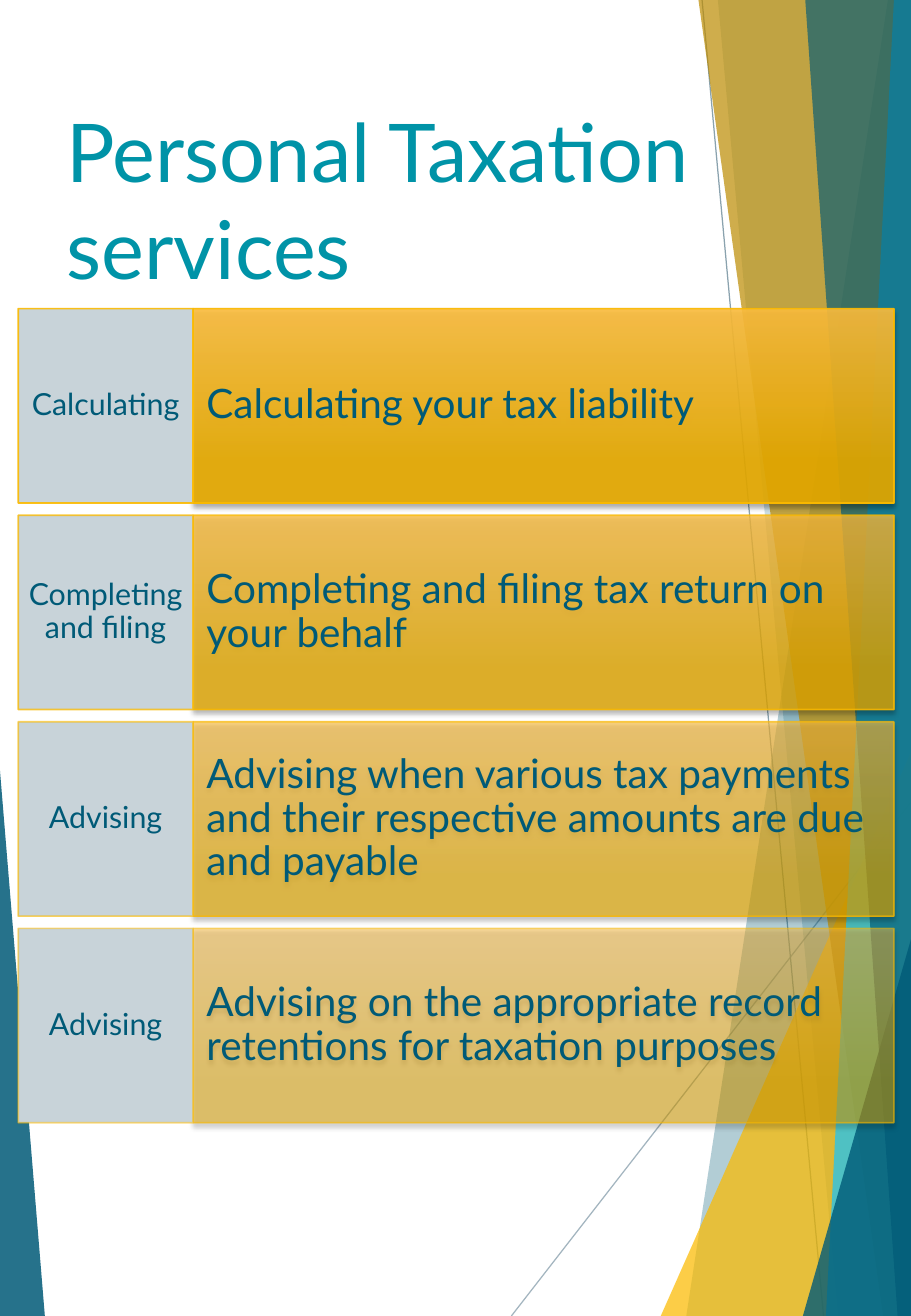
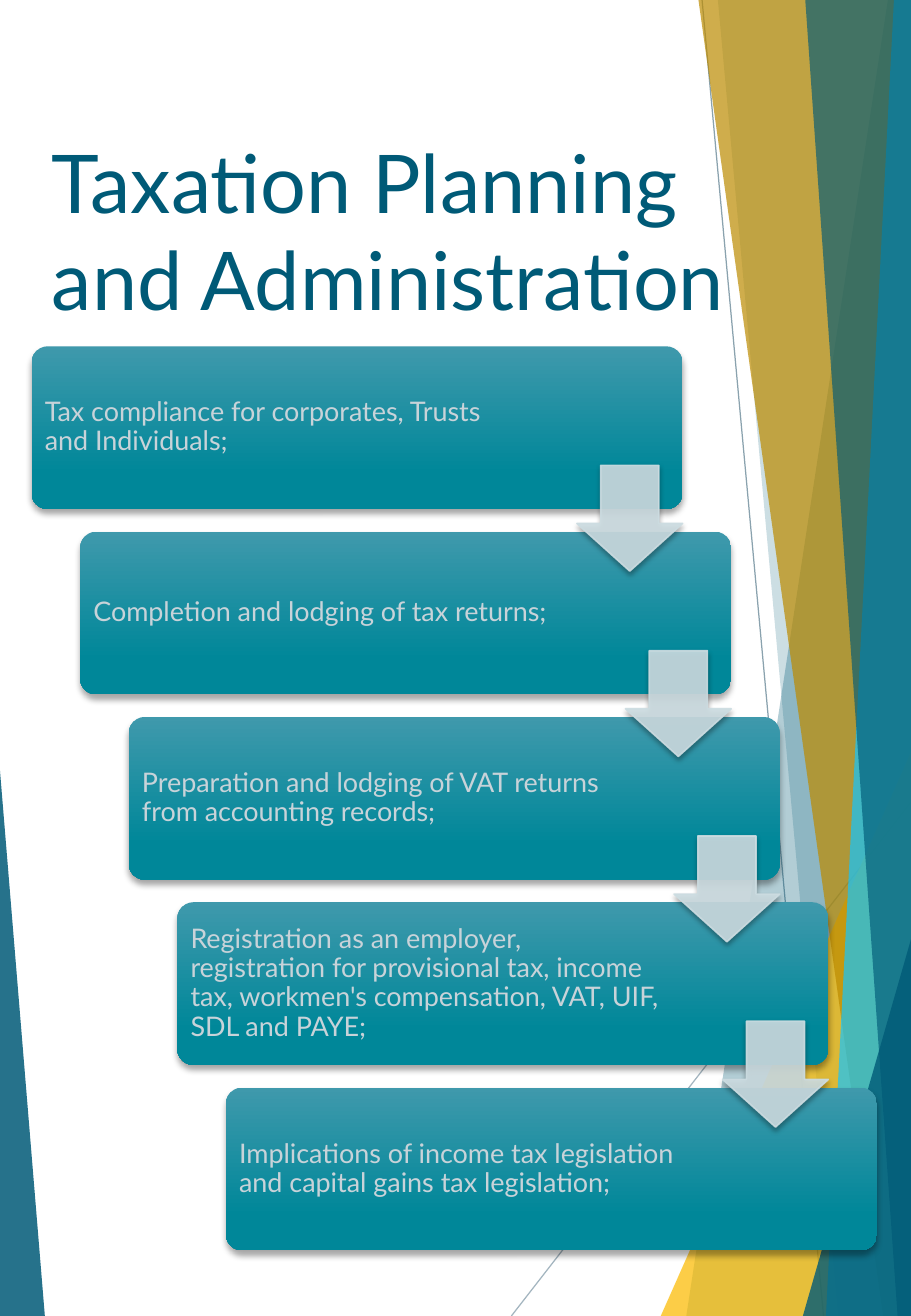
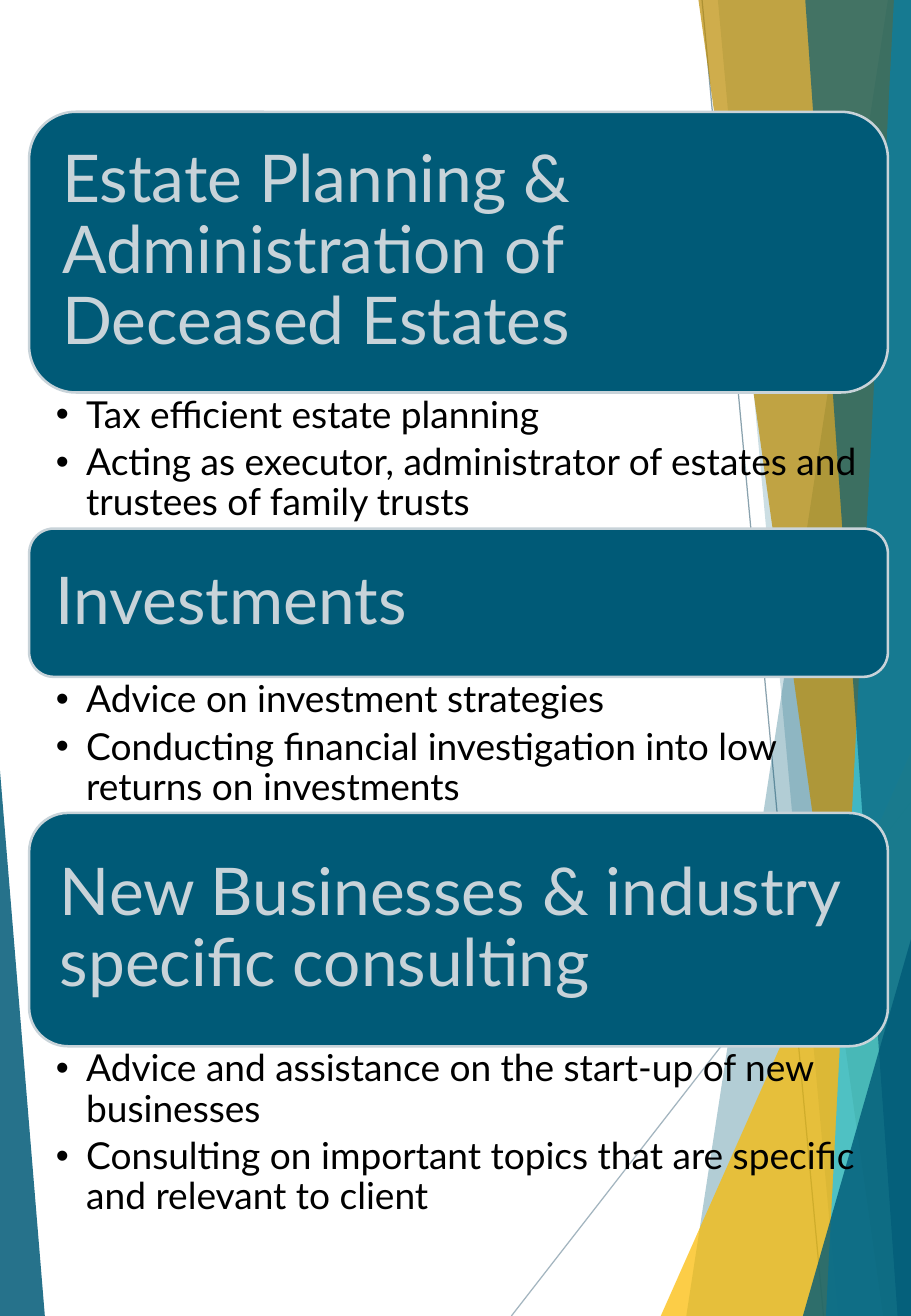
from lxml import etree
from pptx import Presentation
from pptx.dml.color import RGBColor
from pptx.enum import shapes, text
from pptx.oxml.ns import qn
from pptx.util import Inches, Pt

WIDE, HIGH = 7.5, 10.83
FONT = "Lato"
NAVY = RGBColor(0x00, 0x5A, 0x77)
TEAL = RGBColor(0x00, 0x93, 0xA7)
SEA = (RGBColor(0x3F, 0x99, 0xAC), RGBColor(0x00, 0x87, 0x99))
SKY = RGBColor(0x14, 0xC6, 0xFF)
GOLD = RGBColor(0xFB, 0xBA, 0x00)
AMBER = (RGBColor(0xFB, 0xBD, 0x3F), RGBColor(0xE6, 0xAA, 0x00))
OCHRE = RGBColor(0xBC, 0x8B, 0x00)
MIST = RGBColor(0xC8, 0xD3, 0xD9)
PALE = RGBColor(0xCC, 0xDC, 0xE1)
BLACK = RGBColor(0x00, 0x00, 0x00)
GREY = RGBColor(0xA3, 0xB5, 0xBF)
SLATE = RGBColor(0x8A, 0xA2, 0xAE)

RECT = shapes.MSO_SHAPE.RECTANGLE
ROUND = shapes.MSO_SHAPE.ROUNDED_RECTANGLE
ARROW = shapes.MSO_SHAPE.DOWN_ARROW
TOP, MIDDLE = text.MSO_ANCHOR.TOP, text.MSO_ANCHOR.MIDDLE
LEFT, CENTER = text.PP_ALIGN.LEFT, text.PP_ALIGN.CENTER

# Backdrop: lines as (colour, from, to), bands as (colour, opacity, corners)
WEDGE = (NAVY, 85, [(0, 6.34), (0.37, HIGH), (0, HIGH)])
LINES = [
    (GREY, (4.21, HIGH), (WIDE, 6.6)),
    (SLATE, (5.78, 0), (6.78, HIGH)),
]
BANDS = [
    (NAVY, 30, [(7.31, 0), (5.65, HIGH), (WIDE, HIGH), (WIDE, 0)]),
    (NAVY, 20, [(5.91, 0), (6.9, HIGH), (WIDE, HIGH), (WIDE, 0)]),
    (GOLD, 72, [(5.44, HIGH), (WIDE, 6.19), (WIDE, HIGH)]),
    (OCHRE, 70, [(5.75, 0), (7.27, HIGH), (WIDE, HIGH), (WIDE, 0)]),
    (SKY, 70, [(7.36, 0), (6.8, HIGH), (WIDE, HIGH), (WIDE, 0)]),
    (NAVY, 65, [(6.63, 0), (7.39, HIGH), (WIDE, HIGH), (WIDE, 0)]),
    (NAVY, 80, [(6.61, HIGH), (WIDE, 7.73), (WIDE, HIGH)]),
]


def add(parent, tag, **attrs):
    return etree.SubElement(parent, qn(tag), attrs)


def fade(part, opaque):
    """Set the opacity, in percent, of every colour inside an XML part."""
    for color in part.iter(qn("a:srgbClr")):
        add(color, "a:alpha", val=str(round(opaque * 1000)))


def shade(shape, blur, drop):
    """Cast a soft shadow straight down; blur and drop are in points."""
    effects = shape.element.spPr.find(qn("a:effectLst"))
    shadow = add(effects, "a:outerShdw", blurRad=str(Pt(blur)), dist=str(Pt(drop)),
                 dir="5400000", algn="ctr", rotWithShape="0")
    add(add(shadow, "a:srgbClr", val="000000"), "a:alpha", val="35000")


class Deck:
    def __init__(self):
        self.pres = Presentation()
        self.pres.slide_width = Inches(WIDE)
        self.pres.slide_height = Inches(HIGH)
        self.slide = None

    def page(self):
        self.slide = self.pres.slides.add_slide(self.pres.slide_layouts[6])
        self.band(*WEDGE)
        for line in LINES:
            self.line(*line)
        for band in BANDS:
            self.band(*band)

    def paint(self, shape, fill, edge=None, weight=1):
        """Fill with one colour, or with a pair running from top to bottom."""
        shape.shadow.inherit = False
        if isinstance(fill, tuple) and not isinstance(fill, RGBColor):
            shape.fill.gradient()
            shape.fill.gradient_angle = 270
            for stop, color, place in zip(shape.fill.gradient_stops, fill, (0, 0.78)):
                stop.color.rgb = color
                stop.position = place
        else:
            shape.fill.solid()
            shape.fill.fore_color.rgb = fill
        if edge is None:
            shape.line.fill.background()
        else:
            shape.line.color.rgb = edge
            shape.line.width = Pt(weight)

    def band(self, color, opaque, corners):
        first, *rest = [(Inches(x), Inches(y)) for x, y in corners]
        pen = self.slide.shapes.build_freeform(*first)
        pen.add_line_segments(rest, close=True)
        shape = pen.convert_to_shape()
        self.paint(shape, color)
        fade(shape.element.spPr, opaque)

    def line(self, color, start, end):
        ends = [Inches(n) for n in start + end]
        line = self.slide.shapes.add_connector(shapes.MSO_CONNECTOR.STRAIGHT, *ends)
        line.line.color.rgb = color
        line.line.width = Pt(0.75)
        add(line.element.spPr, "a:effectLst")

    def box(self, kind, place, fill, edge=None, weight=1, adjust=()):
        shape = self.slide.shapes.add_shape(kind, *map(Inches, place))
        for i, value in enumerate(adjust):
            shape.adjustments[i] = value
        self.paint(shape, fill, edge, weight)
        return shape

    def label(self, shape, words, size, color, pads, anchor=MIDDLE, align=LEFT, spacing=0.9):
        """Put text in a shape; pads are left, top, right, bottom."""
        frame = shape.text_frame
        frame.word_wrap = True
        frame.vertical_anchor = anchor
        (frame.margin_left, frame.margin_top,
         frame.margin_right, frame.margin_bottom) = map(Inches, pads)
        frame.text = words
        for para in frame.paragraphs:
            para.alignment = align
            para.line_spacing = spacing
            for run in para.runs:
                run.font.name = FONT
                run.font.size = Pt(size)
                run.font.color.rgb = color
        return frame

    def title(self, words, place, color, anchor):
        shape = self.slide.shapes.add_textbox(*map(Inches, place))
        self.label(shape, words, 48, color, (0.1, 0.05, 0.1, 0.05), anchor, spacing=1.0)

    def bullets(self, items, place):
        shape = self.slide.shapes.add_textbox(*map(Inches, place))
        frame = self.label(shape, "\n".join(items), 22, BLACK,
                           (0.22, 0.03, 0.17, 0.03), TOP)
        for para in frame.paragraphs:
            para.space_after = Pt(4.4)
            props = para._p.get_or_add_pPr()
            props.set("marL", str(Inches(0.25)))
            props.set("indent", str(Inches(-0.25)))
            add(props, "a:buFont", typeface="Arial")
            add(props, "a:buChar", char="•")


def personal(deck):
    rows = [
        ("Calculating", "Calculating your tax liability"),
        ("Completing and filing", "Completing and filing tax return on your behalf"),
        ("Advising", "Advising when various tax payments and their respective "
                     "amounts are due and payable"),
        ("Advising", "Advising on the appropriate record retentions for taxation purposes"),
    ]
    deck.page()
    deck.title("Personal Taxation services", (0.45, 1.04, 5.97, 1.19), TEAL, MIDDLE)
    for i, (name, detail) in enumerate(rows):
        top = 2.54 + 1.7 * i
        opaque = 90 - 40 * i / 3
        bar = deck.box(RECT, (1.59, top, 5.77, 1.6), AMBER, GOLD)
        fade(bar.element.spPr, opaque)
        shade(bar, 3, 2)
        deck.label(bar, detail, 24, NAVY, (0.11, 0.1, 0.11, 0.1))
        cell = deck.box(RECT, (0.15, top, 1.44, 1.6), MIST, GOLD)
        fade(cell.element.spPr.find(qn("a:ln")), opaque)
        deck.label(cell, name, 18, NAVY, (0.08, 0.16, 0.08, 0.16), align=CENTER)


def planning(deck):
    steps = [
        "Tax compliance for corporates, Trusts and Individuals;",
        "Completion and lodging of tax returns;",
        "Preparation and lodging of VAT returns from accounting records;",
        "Registration as an employer, registration for provisional tax, income tax, "
        "workmen's compensation, VAT, UIF, SDL and PAYE;",
        "Implications of income tax legislation and capital gains tax legislation;",
    ]
    deck.page()
    deck.title("Taxation Planning\vand Administration", (0.33, 1.04, 6.97, 1.98), NAVY, TOP)
    spots = [(0.26 + 0.4 * i, 2.85 + 6.1 / 4 * i) for i in range(len(steps))]
    for (left, top), words in zip(spots, steps):
        card = deck.box(ROUND, (left, top, 5.36, 1.34), SEA, adjust=[0.1])
        shade(card, 4, 3)
        deck.label(card, words, 16, MIST, (0.07, 0.07, 1.33, 0.07))
    for left, top in spots[:-1]:
        arrow = deck.box(ARROW, (left + 4.49, top + 0.98, 0.87, 0.87), PALE, PALE,
                         adjust=[0.55, 0.45])
        fade(arrow.element.spPr, 90)
        shade(arrow, 3, 2)


def estates(deck):
    parts = [
        ("Estate Planning & Administration of Deceased Estates", 2.31, 1.12,
         ["Tax efficient estate planning",
          "Acting as executor, administrator of estates and trustees of family trusts"]),
        ("Investments", 1.22, 1.12,
         ["Advice on investment strategies",
          "Conducting financial investigation into low returns on investments"]),
        ("New Businesses & industry specific consulting", 1.92, 1.41,
         ["Advice and assistance on the start-up of new businesses",
          "Consulting on important topics that are specific and relevant to client"]),
    ]
    deck.page()
    top = 0.92
    for head, tall, deep, items in parts:
        card = deck.box(ROUND, (0.24, top, 7.07, tall), NAVY, MIST, 1.5)
        deck.label(card, head, 39, MIST, (0.16,) * 4)
        deck.bullets(items, (0.24, top + tall, 7.07, deep))
        top += tall + deep


def main():
    deck = Deck()
    personal(deck)
    planning(deck)
    estates(deck)
    deck.pres.save("out.pptx")


if __name__ == "__main__":
    main()
